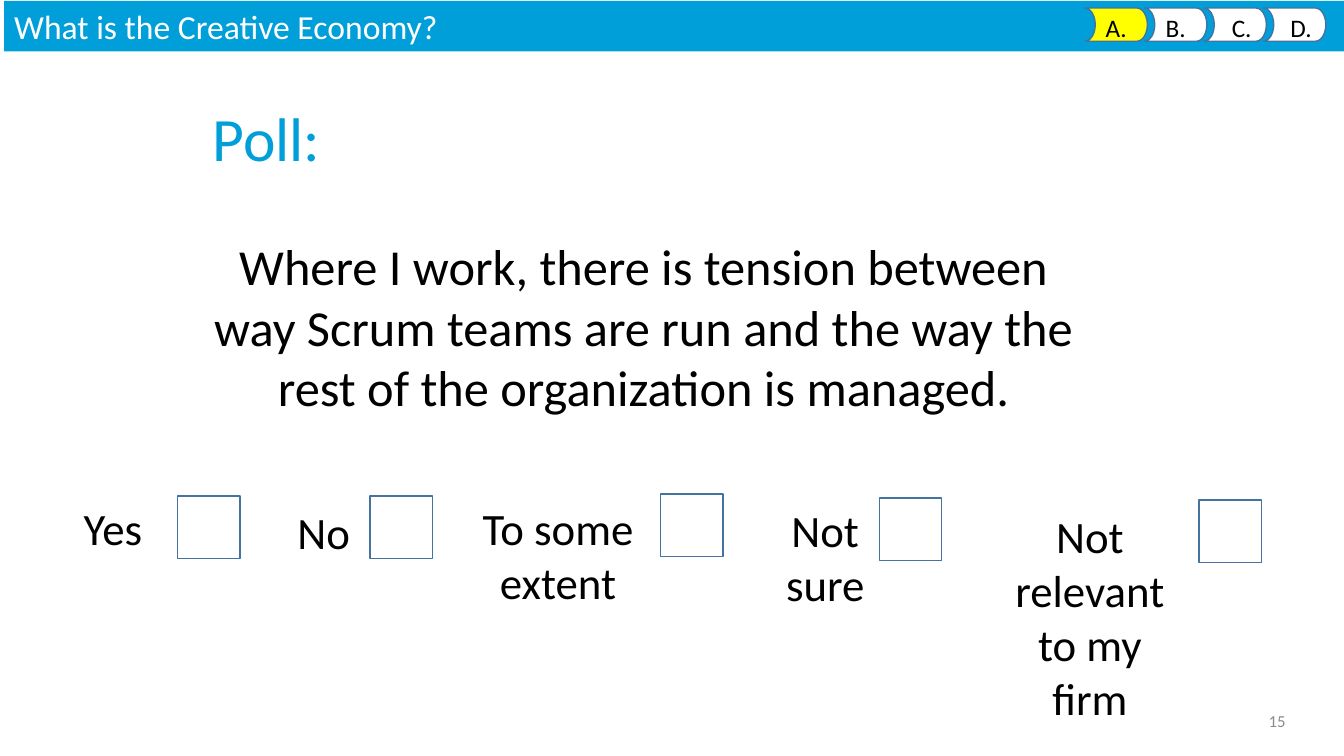
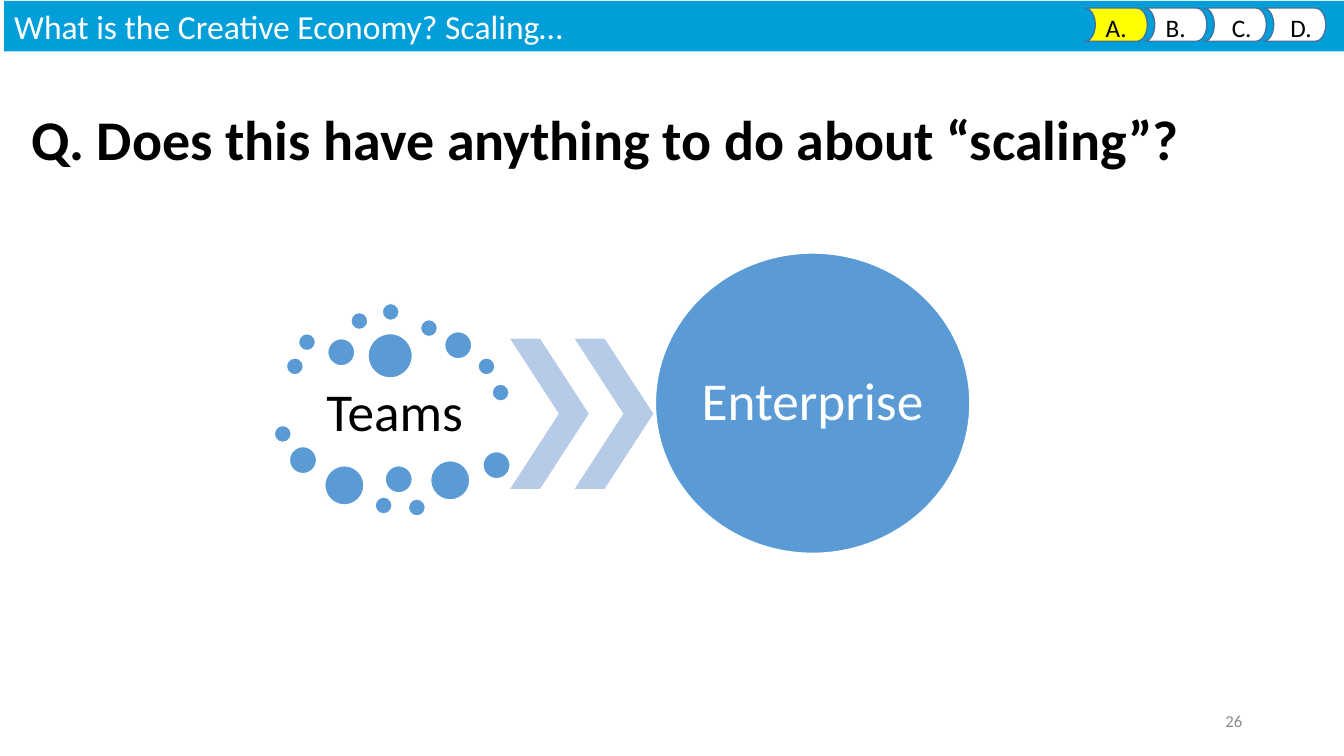
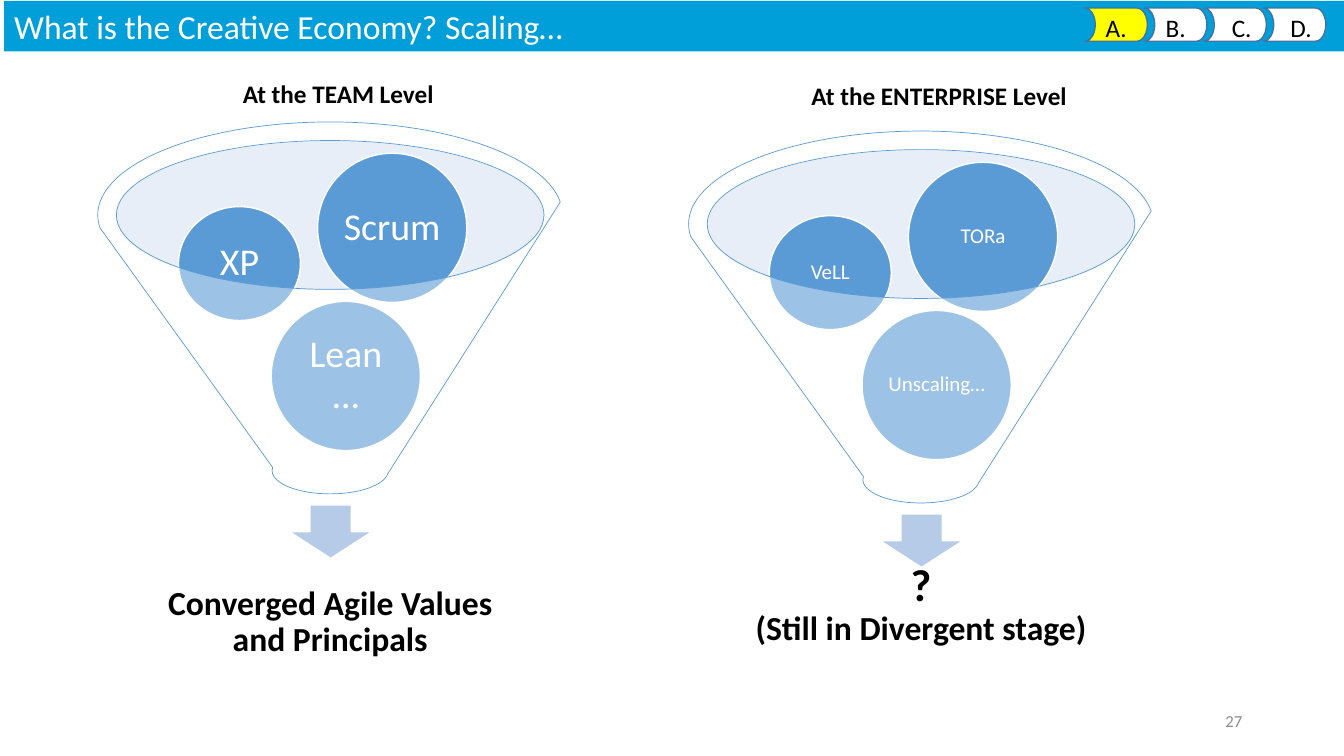
from pptx import Presentation
from pptx.dml.color import RGBColor
from pptx.enum import shapes, text
from pptx.oxml.ns import qn
from pptx.util import Inches, Pt
from lxml import etree

# Shared look
FONT = "Calibri"
BAND, BLUE, PALE, MOUTH = "009FDA", "5B9BD5", "B5CBE7", "C4D5EB"
OUTLINE, YELLOW, WHITE, BLACK, GREY = "43739E", "FFFF00", "FFFFFF", "000000", "8C8C8C"
SHAPE, ALIGN, ANCHOR = shapes.MSO_SHAPE, text.PP_ALIGN, text.MSO_ANCHOR

# Section tabs: label, fill, left inset that nudges the label
TABS = [("A.", YELLOW, 0), ("B.", WHITE, 0), ("C.", WHITE, 0.13), ("D.", WHITE, 0.13)]
TAB_LEFT, TAB_STEP = 10.76, 0.59

# Poll slide
QUESTION = ("Where I work, there is tension between way Scrum teams are run "
            "and the way the rest of the organization is managed.")
CHECK_SIZE = 0.62
# label, label left, label top, label width, checkbox left, checkbox top
ANSWERS = [
    ("Yes", 0.53, 4.92, 1.18, 1.76, 4.92),
    ("No", 2.62, 4.96, 1.18, 3.67, 4.92),
    ("To some extent", 4.53, 4.92, 2.01, 6.55, 4.90),
    ("Not sure", 7.42, 4.94, 1.53, 8.72, 4.94),
    ("Not relevant to my firm", 9.92, 5.00, 1.78, 11.89, 4.96),
]

# Scaling slide: dot diameter -> left and top of each dot
DOTS = {
    0.17: [(2.84, 3.55), (2.96, 3.31), (3.48, 3.10), (3.79, 3.01), (4.17, 3.17),
           (4.74, 3.55), (4.88, 3.81), (2.72, 4.22), (3.72, 4.93), (4.05, 4.95)],
    0.27: [(3.25, 3.36), (4.41, 3.29), (2.87, 4.43), (3.82, 4.62), (4.79, 4.48)],
    0.39: [(3.22, 4.62), (4.27, 4.57)],
    0.44: [(3.65, 3.31)],
}
CHEVRON_LEFTS = [5.06, 5.70]

# Funnel slide: bubble places are relative to the funnel's corner
BUBBLES = [(1.72, 1.78, 1.48, 1.48), (0.80, 0.84, 1.21, 1.13), (2.18, 0.31, 1.48, 1.48)]
FUNNELS = [
    dict(left=0.97, top=1.21, words=["Lean…", "XP", "Scrum"], size=27, inset=0.04,
         heading=("At the TEAM Level", 2.31, 0.73, 2.11),
         outcome=[("Converged Agile Values and Principals", 24)], outcome_top=5.68),
    dict(left=6.83, top=1.30, words=["Unscaling…", "VeLL", "TORa"], size=15, inset=0.02,
         heading=("At the ENTERPRISE Level", 7.95, 0.75, 2.76),
         outcome=[("?", 32), ("(Still in Divergent stage)", 24)], outcome_top=5.51),
]


def color(value):
    return RGBColor.from_string(value)


def add_para(frame, words, size, ink=BLACK, bold=False, align=ALIGN.CENTER, spacing=None):
    """Fill the frame's first paragraph, or append one when it is taken."""
    para = frame.paragraphs[-1]
    if para.runs:
        para = frame.add_paragraph()
    para.alignment = align
    para.line_spacing = spacing
    span = para.add_run()
    span.text = words
    span.font.name, span.font.size, span.font.bold = FONT, Pt(size), bold
    span.font.color.rgb = color(ink)
    return para


def set_frame(frame, inset=None, anchor=ANCHOR.MIDDLE, wrap=True):
    frame.word_wrap = wrap
    frame.vertical_anchor = anchor
    if inset is not None:
        frame.margin_left = frame.margin_right = Inches(inset)
        frame.margin_top = frame.margin_bottom = Inches(inset)
    return frame


def add_text(page, left, top, width, height, anchor=ANCHOR.TOP, inset=None, wrap=True):
    box = page.shapes.add_textbox(Inches(left), Inches(top), Inches(width), Inches(height))
    return set_frame(box.text_frame, inset, anchor, wrap)


def add_shape(page, kind, left, top, width, height, fill, line=None, weight=1, alpha=None):
    shape = page.shapes.add_shape(kind, Inches(left), Inches(top), Inches(width), Inches(height))
    shape.shadow.inherit = False
    shape.fill.solid()
    shape.fill.fore_color.rgb = color(fill)
    if alpha:
        tint = shape.fill._xPr.find(qn("a:solidFill"))[0]
        etree.SubElement(tint, qn("a:alpha"), val=str(alpha * 1000))
    if line:
        shape.line.color.rgb = color(line)
        shape.line.width = Pt(weight)
    else:
        shape.line.fill.background()
    return shape


def add_page(deck, heading, number, number_left):
    page = deck.slides.add_slide(deck.slide_layouts[5])
    # Title band
    title = page.shapes.title
    title.left, title.top = Inches(0.04), Inches(0.01)
    title.width, title.height = Inches(13.29), Inches(0.5)
    title.fill.solid()
    title.fill.fore_color.rgb = color(BAND)
    set_frame(title.text_frame).auto_size = text.MSO_AUTO_SIZE.NONE
    add_para(title.text_frame, heading, 24, WHITE, align=ALIGN.LEFT)
    # Section tabs
    for index, (label, fill, nudge) in enumerate(TABS):
        tab = add_shape(page, SHAPE.FLOWCHART_STORED_DATA, TAB_LEFT + index * TAB_STEP, 0.08,
                        0.62, 0.33, fill, OUTLINE)
        tab._element.spPr.find(qn("a:xfrm")).set("flipH", "1")
        frame = set_frame(tab.text_frame, 0, wrap=False)
        frame.margin_left, frame.margin_top = Inches(nudge), Inches(0.06)
        add_para(frame, label, 18)
    # Page number
    frame = add_text(page, number_left, 6.95, 3, 0.4, ANCHOR.MIDDLE)
    add_para(frame, number, 12, GREY, align=ALIGN.RIGHT)
    return page


def build_poll(deck):
    page = add_page(deck, "What is the Creative Economy?", "15", 9.85)
    frame = add_text(page, 2.01, 0.94, 8.75, 3.26)
    add_para(frame, "Poll:", 44, BAND, align=ALIGN.LEFT)
    add_para(frame, QUESTION, 36).space_before = Pt(44)
    for label, left, top, width, check_left, check_top in ANSWERS:
        add_shape(page, SHAPE.RECTANGLE, check_left, check_top, CHECK_SIZE, CHECK_SIZE,
                  WHITE, OUTLINE)
        add_para(add_text(page, left, top, width, 0.64), label, 32)


def build_scaling(deck):
    page = add_page(deck, "What is the Creative Economy? Scaling…", "26", 9.42)
    add_para(add_text(page, 0.21, 0.99, 12.63, 0.77),
             "Q. Does this have anything to do about “scaling”?", 40, bold=True, align=ALIGN.LEFT)
    # Ring of dots around the teams
    frame = add_text(page, 2.85, 3.76, 2.13, 0.7, ANCHOR.MIDDLE, 0.05)
    add_para(frame, "Teams", 38, spacing=0.9)
    for size, places in DOTS.items():
        for left, top in places:
            add_shape(page, SHAPE.OVAL, left, top, size, size, BLUE, WHITE)
    # Chevrons lead to the enterprise
    for left in CHEVRON_LEFTS:
        chevron = add_shape(page, SHAPE.CHEVRON, left, 3.36, 0.78, 1.49, PALE)
        chevron.adjustments[0] = 0.62
    enterprise = add_shape(page, SHAPE.OVAL, 6.5, 2.51, 3.12, 2.98, BLUE, WHITE)
    add_para(set_frame(enterprise.text_frame, 0), "Enterprise", 38, WHITE, spacing=0.9)


def add_funnel(page, left, top, words, size, inset, heading, outcome, outcome_top):
    add_shape(page, SHAPE.OVAL, left + 0.18, top + 0.19, 4.25, 1.48, MOUTH, alpha=40)
    add_shape(page, SHAPE.DOWN_ARROW, left + 1.9, top + 3.8, 0.82, 0.53, PALE, WHITE)
    for word, (dx, dy, width, height) in zip(words, BUBBLES):
        bubble = add_shape(page, SHAPE.OVAL, left + dx, top + dy, width, height, BLUE, WHITE)
        add_para(set_frame(bubble.text_frame, inset), word, size, WHITE, spacing=0.9)
    add_shape(page, SHAPE.FUNNEL, left, top, 4.61, 3.69, WHITE, BLUE, 0.5, alpha=40)
    # Outcome below, heading above
    frame = add_text(page, left + 0.33, outcome_top, 3.95, 0.99, ANCHOR.MIDDLE, 0.19)
    for line, line_size in outcome:
        add_para(frame, line, line_size, bold=True, spacing=0.9)
    label, label_left, label_top, label_width = heading
    frame = add_text(page, label_left, label_top, label_width, 0.4, wrap=False)
    add_para(frame, label, 18, bold=True, align=ALIGN.LEFT)


def build_funnels(deck):
    page = add_page(deck, "What is the Creative Economy? Scaling…", "27", 9.42)
    for funnel in FUNNELS:
        add_funnel(page, **funnel)


def main():
    deck = Presentation()
    deck.slide_width, deck.slide_height = Inches(13.33), Inches(7.5)
    build_poll(deck)
    build_scaling(deck)
    build_funnels(deck)
    deck.save("out.pptx")


if __name__ == "__main__":
    main()
